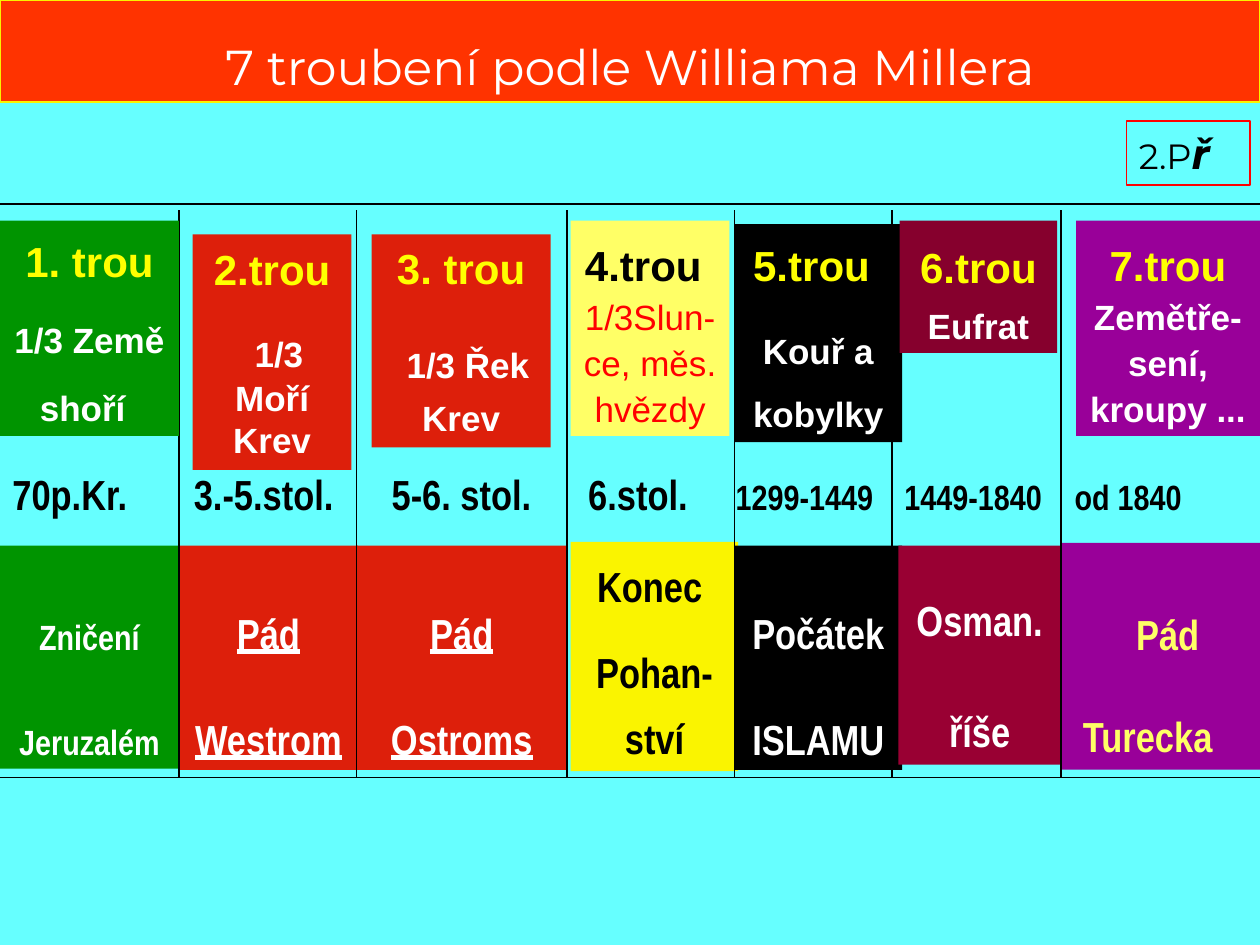
from lxml import etree
from pptx import Presentation
from pptx.dml.color import RGBColor
from pptx.enum import shapes, text
from pptx.oxml.ns import qn
from pptx.util import Inches, Pt

BLACK = RGBColor(0x00, 0x00, 0x00)
WHITE = RGBColor(0xFF, 0xFF, 0xFF)
CYAN = RGBColor(0x66, 0xFF, 0xFF)
ORANGE = RGBColor(0xFF, 0x33, 0x00)
GOLD = RGBColor(0xFA, 0xF4, 0x00)
YELLOW = RGBColor(0xFF, 0xFF, 0x00)
PALE = RGBColor(0xFF, 0xFF, 0x66)
PURE_RED = RGBColor(0xFF, 0x00, 0x00)
RED = RGBColor(0xDD, 0x1F, 0x0B)
GREEN = RGBColor(0x00, 0x94, 0x00)
WINE = RGBColor(0x99, 0x00, 0x33)
DARK_WINE = RGBColor(0x86, 0x00, 0x2D)
PURPLE = RGBColor(0x99, 0x00, 0x99)


def add_run(paragraph, words, size, color, font, bold=True):
    run = paragraph.add_run()
    run.text = words
    run.font.size = Pt(size)
    run.font.name = font
    run.font.bold = bold
    run.font.color.rgb = color
    return run


def add_block(left, top, width, height, fill, font, paragraphs, underline=None):
    """Add a filled box; a paragraph is (line spacing, space before, runs)."""
    block = slide.shapes.add_shape(shapes.MSO_SHAPE.RECTANGLE, Inches(left),
                                   Inches(top), Inches(width), Inches(height))
    block.shadow.inherit = False
    block.fill.solid()
    block.fill.fore_color.rgb = fill
    block.line.fill.background()
    frame = block.text_frame
    frame.word_wrap = True
    frame.vertical_anchor = text.MSO_ANCHOR.MIDDLE
    for i, (spacing, before, runs) in enumerate(paragraphs):
        paragraph = frame.add_paragraph() if i else frame.paragraphs[0]
        paragraph.alignment = text.PP_ALIGN.CENTER
        paragraph.line_spacing = spacing
        paragraph.space_before = Pt(before)
        for words, size, color, *bold in runs:
            if words == "\n":
                paragraph.add_line_break()
                continue
            run = add_run(paragraph, words, size, color, font, *bold)
            run.font.underline = underline


prs = Presentation()
prs.slide_width, prs.slide_height = Inches(10), Inches(7.5)
slide = prs.slides.add_slide(prs.slide_layouts[5])
slide.background.fill.solid()
slide.background.fill.fore_color.rgb = CYAN

# Title and section mark
title = slide.shapes.title
title.left, title.top = Inches(0), Inches(0)
title.width, title.height = Inches(10), Inches(0.81)
title.fill.solid()
title.fill.fore_color.rgb = ORANGE
title.line.color.rgb = GOLD
title.line.width = Pt(0.75)
title.text_frame.auto_size = text.MSO_AUTO_SIZE.NONE
title.text_frame.vertical_anchor = text.MSO_ANCHOR.MIDDLE
heading = title.text_frame.paragraphs[0]
heading.alignment = text.PP_ALIGN.CENTER
heading.line_spacing = 1.5
add_run(heading, "7 troubení podle Williama Millera", 28, WHITE, "Montserrat", False)

mark = slide.shapes.add_textbox(Inches(8.94), Inches(0.96), Inches(0.98), Inches(0.51))
mark.line.color.rgb = PURE_RED
mark.line.width = Pt(0.75)
mark.text_frame.word_wrap = True
mark_line = mark.text_frame.paragraphs[0]
add_run(mark_line, "2.P", 20, BLACK, "Montserrat", False)
add_run(mark_line, "ř", 24, BLACK, "Montserrat").font.italic = True

# Lower row: what each trumpet brought about
fulfilments = [
    (0, 4.33, 1.42, 1.77, GREEN, [(2.5, 0, [("Zničení Jeruzalém", 20, WHITE)])]),
    (1.42, 4.33, 1.42, 1.78, RED, [(2.1, 0, [("Pád Westrom", 24, WHITE)])], True),
    (2.83, 4.33, 1.67, 1.78, RED, [(2.1, 0, [("Pád Ostroms", 24, WHITE)])], True),
    (4.53, 4.3, 1.33, 1.82, GOLD, [(1.2, 0, [("Konec ", 24, BLACK)]),
                                   (1.3, 12, [("Pohan-ství", 24, BLACK)])]),
    (5.83, 4.33, 1.33, 1.78, BLACK, [(2.1, 0, [("Počátek ISLAMU", 24, WHITE)])]),
    (7.13, 4.33, 1.29, 1.74, WINE, [(1.8, 0, [("Osman.", 24, WHITE)]),
                                    (1.8, 12, [("říše", 24, WHITE)])]),
    (8.42, 4.31, 1.58, 1.8, PURPLE, [
        (1.5, 0, [(" ", 36, PALE), ("Pád", 24, PALE), (" ", 20, PALE),
                  ("Turecka", 24, PALE), ("  ", 32, WHITE)])]),
]
for left, top, width, height, fill, paragraphs, *underline in fulfilments:
    add_block(left, top, width, height, fill, "Arial Narrow", paragraphs, *underline)

# Dates, one per column, set on tab stops
dates = slide.shapes.add_textbox(Inches(0), Inches(3.67), Inches(10), Inches(0.5))
dates.text_frame.word_wrap = True
date_line = dates.text_frame.paragraphs[0]
tab_list = etree.SubElement(date_line._p.get_or_add_pPr(), qn("a:tabLst"))
for stop in (1.44, 3.01, 4.57, 5.74, 7.08, 8.43):
    etree.SubElement(tab_list, qn("a:tab"), pos=str(Inches(stop)), algn="l")
add_run(date_line, "70p.Kr.\t3.-5.stol.\t5-6. stol.\t6.stol.\t", 24, BLACK, "Arial Narrow")
add_run(date_line, "1299-1449\t1449-1840\tod 1840", 20, BLACK, "Arial Narrow")

# Column and row rules
columns = [(x, 1.67, x, 6.17) for x in (1.42, 2.83, 4.5, 5.83, 7.08, 8.42)]
rows = [(0, y, 10, y) for y in (1.62, 6.17)]
for ends in columns + rows:
    rule = slide.shapes.add_connector(shapes.MSO_CONNECTOR.STRAIGHT,
                                      *[Inches(value) for value in ends])
    rule.line.color.rgb = BLACK
    rule.line.width = Pt(0.75)
    etree.SubElement(rule._element.spPr, qn("a:effectLst"))

# Upper row: the seven trumpets
trumpets = [
    (0, 1.75, 1.42, 1.71, GREEN, [
        (1.2, 0, [("1. trou", 24, YELLOW)]),
        (1.2, 14, [("1/3 Země shoří", 20, WHITE), (" ", 28, BLACK)])]),
    (1.53, 1.86, 1.26, 1.87, RED, [
        (1, 0, [("2.trou", 24, YELLOW)]),
        (1, 14, [(" ", 28, WHITE), ("1/3 Moří Krev", 20, WHITE)])]),
    (2.95, 1.86, 1.42, 1.69, RED, [
        (1, 0, [("3. trou", 24, YELLOW)]),
        (1.2, 14, [(" ", 28, WHITE), ("1/3 Řek Krev", 20, WHITE)])]),
    (4.53, 1.75, 1.26, 1.71, PALE, [
        (1.1, 0, [("4.trou", 24, BLACK), (" ", 28, WHITE), (" ", 24, PURE_RED),
                  ("1/3Slun-ce, měs. hvězdy", 20, PURE_RED, False)])]),
    (5.83, 1.78, 1.33, 1.73, BLACK, [
        (1, 0, [("5.trou", 24, YELLOW), ("  ", 28, WHITE)]),
        (1.5, 10, [("Kouř a kobylky", 20, WHITE)])]),
    (7.14, 1.75, 1.25, 1.05, DARK_WINE, [
        (1.3, 0, [("6.trou", 24, YELLOW), ("\n", 24, YELLOW), ("Eufrat", 20, WHITE)])]),
    (8.54, 1.75, 1.46, 1.71, PURPLE, [
        (1.1, 0, [("7.trou", 24, YELLOW), (" ", 28, WHITE),
                  ("Zemětře-sení, kroupy ...", 20, WHITE)])]),
]
for left, top, width, height, fill, paragraphs in trumpets:
    add_block(left, top, width, height, fill, "Arial", paragraphs)

prs.save("out.pptx")
